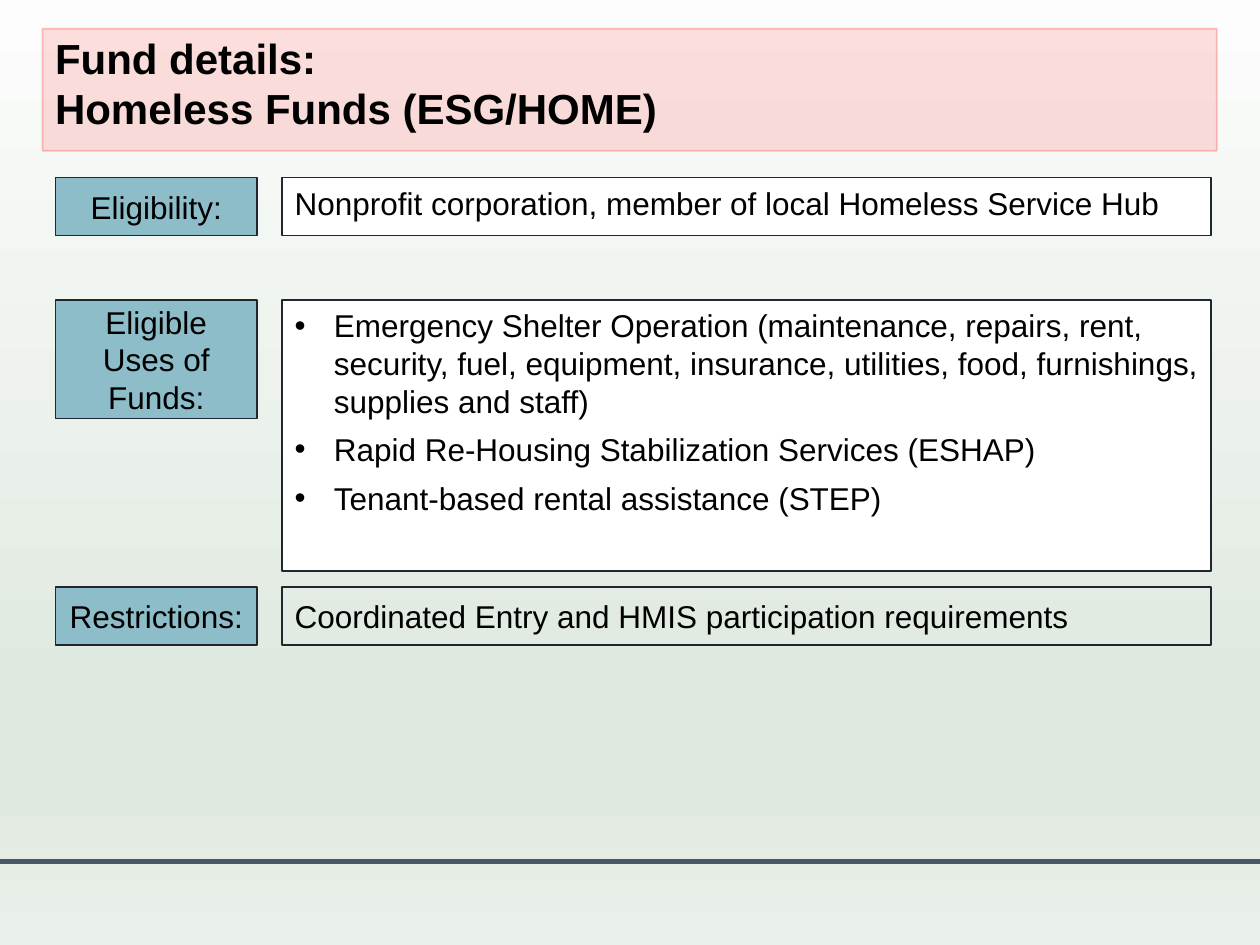
import copy

import lxml.etree
import pptx
import pptx.dml.color
import pptx.enum.dml
import pptx.enum.shapes
import pptx.enum.text
import pptx.oxml
import pptx.oxml.ns
import pptx.util

Cm = pptx.util.Cm
Pt = pptx.util.Pt
qn = pptx.oxml.ns.qn
Align = pptx.enum.text.PP_ALIGN
Anchor = pptx.enum.text.MSO_ANCHOR

BLACK, WHITE, RED = "000000", "FFFFFF", "FF0000"
LABEL_FILL, OUTLINE, RULE = "8CBDC8", "20272E", "495869"
BACKGROUND_STOPS = [(0, "FCFDFC"), (74, "E0E9E0"), (83, "E0E9E0"), (100, "EAF1EB")]
BULLET_INDENT = 0.79

ROWS = [
    (3.58, 1.17, 1.17, "Eligibility:",
     ["Nonprofit corporation, member of local Homeless Service Hub"],
     {"fill": WHITE}, {}),
    (6.05, 2.39, 5.46, "Eligible Uses of Funds:",
     ["Emergency Shelter Operation (maintenance, repairs, rent, security, fuel, "
      "equipment, insurance, utilities, food, furnishings, supplies and staff)",
      "Rapid Re-Housing Stabilization Services (ESHAP)",
      "Tenant-based rental assistance (STEP)"],
     {"fill": WHITE}, {"bullet": "•", "space_after": 6}),
    (11.84, 1.17, 1.17, "Restrictions:",
     ["Coordinated Entry and HMIS participation requirements"],
     {}, {"anchor": Anchor.MIDDLE}),
]


def color(value):
    return pptx.dml.color.RGBColor.from_string(value)


def set_opacity(fill, percent, shape_part):
    fill.solid()
    fill.fore_color.rgb = color(RED)
    clr = shape_part.find(qn("a:solidFill")).find(qn("a:srgbClr"))
    lxml.etree.SubElement(clr, qn("a:alpha")).set("val", str(percent * 1000))


def add_box(slide, left, top, width, height, fill=None, line=OUTLINE):
    shape = slide.shapes.add_shape(
        pptx.enum.shapes.MSO_SHAPE.RECTANGLE, Cm(left), Cm(top), Cm(width), Cm(height))
    shape.shadow.inherit = False
    if fill:
        shape.fill.solid()
        shape.fill.fore_color.rgb = color(fill)
    else:
        shape.fill.background()
    shape.line.color.rgb = color(line)
    shape.line.width = Pt(1)
    return shape


def add_bullet(paragraph, character):
    properties = paragraph._p.get_or_add_pPr()
    indent = Cm(BULLET_INDENT)
    properties.set("marL", str(indent))
    properties.set("indent", str(-indent))
    lxml.etree.SubElement(properties, qn("a:buFont")).set("typeface", "Arial")
    lxml.etree.SubElement(properties, qn("a:buChar")).set("char", character)


def write_text(shape, lines, size=18, bold=False, align=Align.LEFT,
               anchor=Anchor.TOP, bullet=None, space_after=0):
    frame = shape.text_frame
    frame.word_wrap = True
    frame.vertical_anchor = anchor
    for index, line in enumerate(lines):
        paragraph = frame.add_paragraph() if index else frame.paragraphs[0]
        paragraph.alignment = align
        if space_after and index < len(lines) - 1:
            paragraph.space_after = Pt(space_after)
        if bullet:
            add_bullet(paragraph, bullet)
        run = paragraph.add_run()
        run.text = line
        run.font.name = "Arial"
        run.font.size = Pt(size)
        run.font.bold = bold
        run.font.color.rgb = color(BLACK)


def paint_background(slide):
    fill = slide.background.fill
    fill.gradient()
    fill.gradient_angle = 270
    stop_list = next(slide.element.iter(qn("a:gsLst")))
    while len(stop_list) < len(BACKGROUND_STOPS):
        stop_list.append(copy.deepcopy(stop_list[0]))
    for stop, (position, value) in zip(fill.gradient_stops, BACKGROUND_STOPS):
        stop.position = position / 100
        stop.color.rgb = color(value)


def add_rule(slide, left, top, width):
    rule = slide.shapes.add_connector(
        pptx.enum.shapes.MSO_CONNECTOR.STRAIGHT,
        Cm(left), Cm(top), Cm(left + width), Cm(top))
    rule.line.color.rgb = color(RULE)
    rule.line.width = Pt(3)
    lxml.etree.SubElement(rule._element.spPr, qn("a:effectLst"))


def add_title(slide, left, top, width, height):
    banner = add_box(slide, left, top, width, height)
    properties = banner._element.spPr
    set_opacity(banner.fill, 12, properties)
    set_opacity(banner.line.fill, 24, properties.find(qn("a:ln")))
    title = slide.shapes.add_textbox(
        Cm(left), Cm(top - 0.05), Cm(width), Cm(height - 0.15))
    write_text(title, ["Fund details:", "Homeless Funds (ESG/HOME)"], size=24, bold=True)


def add_details(slide, left, width):
    label_width, content_offset = 4.06, 4.57
    for top, label_height, content_height, name, lines, box_format, text_format in ROWS:
        label = add_box(slide, left, top, label_width, label_height, fill=LABEL_FILL)
        write_text(label, [name], align=Align.CENTER, anchor=Anchor.MIDDLE)
        content = add_box(slide, left + content_offset, top,
                          width - content_offset, content_height, **box_format)
        write_text(content, lines, **text_format)


def main():
    presentation = pptx.Presentation()
    presentation.slide_width = Cm(25.4)
    presentation.slide_height = Cm(19.05)
    slide = presentation.slides.add_slide(presentation.slide_layouts[6])
    paint_background(slide)
    add_rule(slide, 0, 17.37, 25.4)
    add_title(slide, 0.86, 0.58, 23.67, 2.46)
    add_details(slide, 1.12, 23.29)
    presentation.save("out.pptx")


if __name__ == "__main__":
    main()
